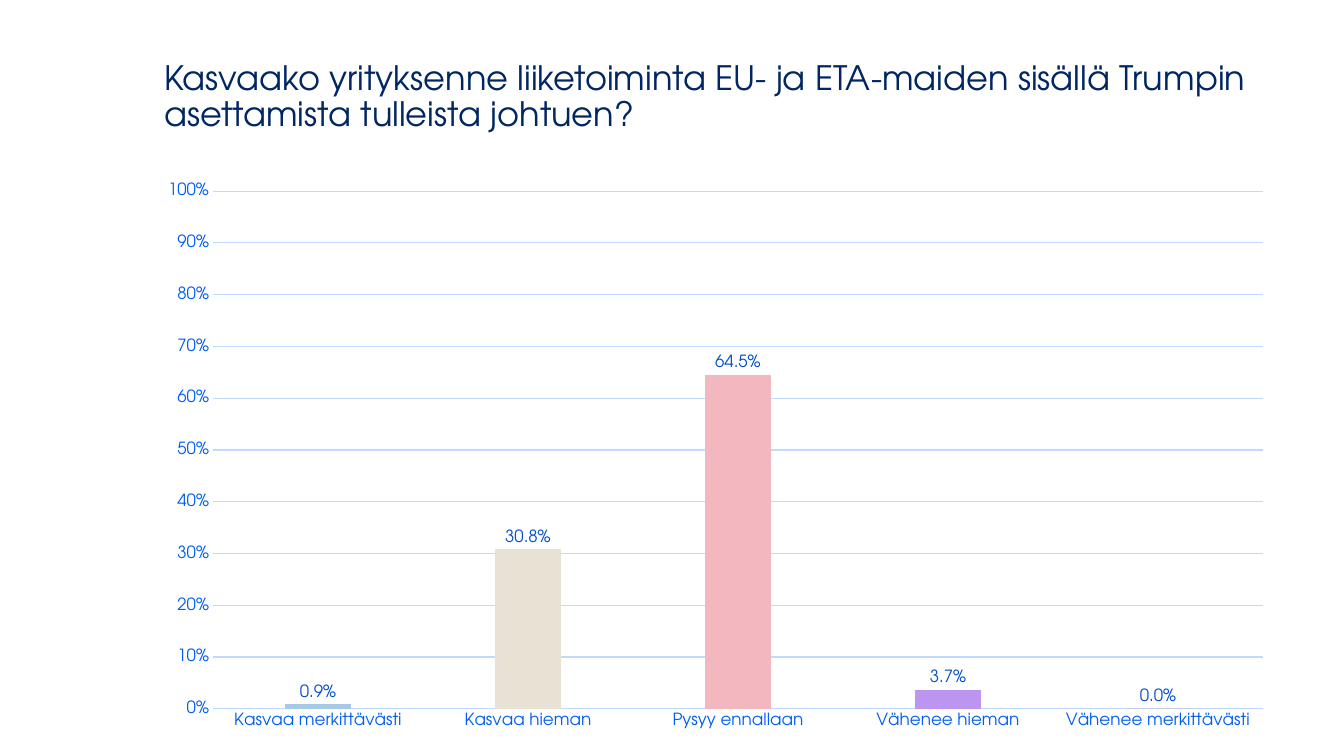
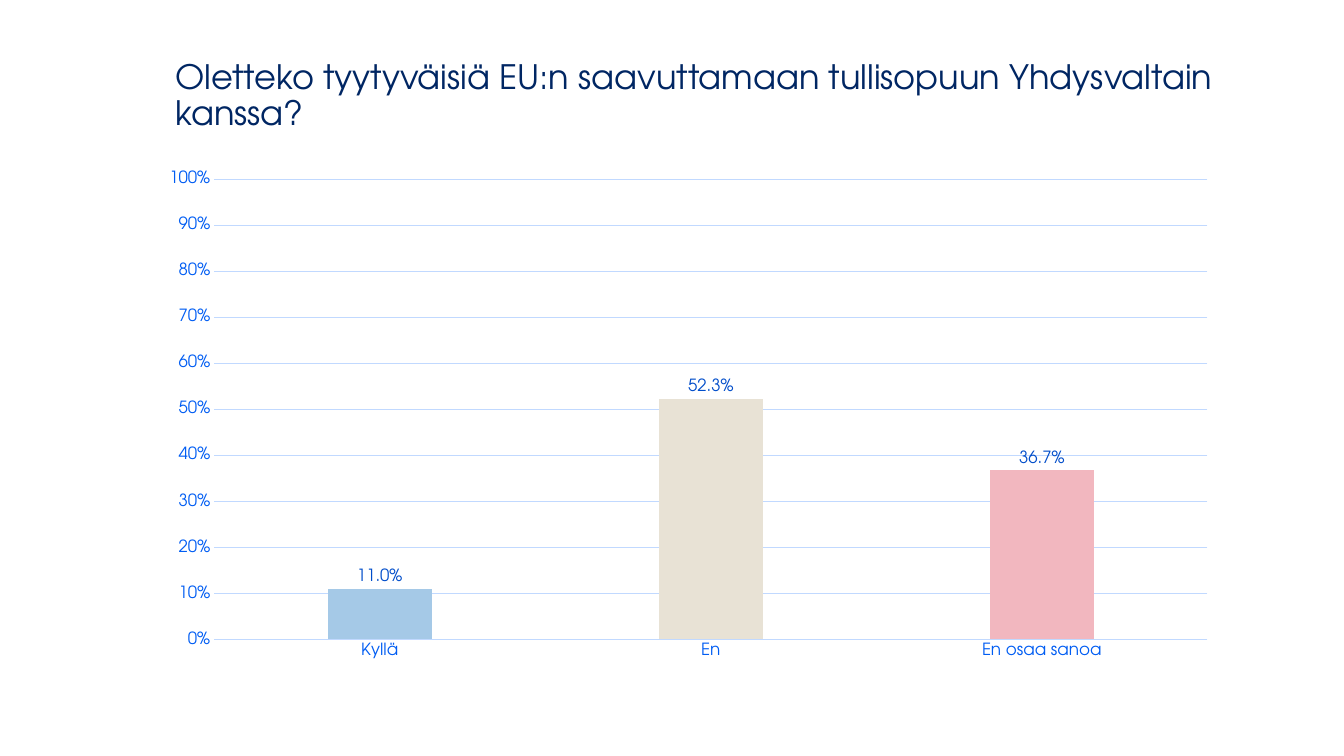
import pptx
import pptx.chart.data
import pptx.dml.color
import pptx.enum.chart
import pptx.enum.text
import pptx.oxml
import pptx.oxml.ns
import pptx.util
from pptx.util import Inches

# Shared style
FONT = "TeX Gyre Adventor"
NAVY, AXIS_BLUE, LABEL_BLUE, GRID = "002663", "005DF3", "004DCA", "C1D9FF"
BAR_COLORS = ["A5C9E7", "E8E2D5", "F2B7BF", "BB95EF", "E66342"]
TITLE_SIZE = (10.94, 1.45)

# Content: boxes are left, top, width, height; plot is in fractions of the chart
SLIDES = [
    {
        "title": "Kasvaako yrityksenne liiketoiminta EU- ja ETA-maiden sisällä "
                 "Trumpin asettamista tulleista johtuen?",
        "title_at": (1.53, 0.24),
        "chart_box": (1.53, 1.8, 11.21, 5.7),
        "plot": (0.052, 0.017, 0.929, 0.901),
        "answers": [
            ("Kasvaa merkittävästi", 0.009),
            ("Kasvaa hieman", 0.308),
            ("Pysyy ennallaan", 0.645),
            ("Vähenee hieman", 0.037),
            ("Vähenee merkittävästi", 0),
        ],
    },
    {
        "title": "Oletteko tyytyväisiä EU:n saavuttamaan tullisopuun "
                 "Yhdysvaltain kanssa?",
        "title_at": (1.64, 0.23),
        "chart_box": (1.55, 1.68, 10.65, 5.13),
        "plot": (0.054, 0.019, 0.925, 0.89),
        "answers": [("Kyllä", 0.11), ("En", 0.523), ("En osaa sanoa", 0.367)],
    },
]


def rgb(value):
    return pptx.dml.color.RGBColor.from_string(value)


def style_font(font, size, color):
    font.name = FONT
    font.size = pptx.util.Pt(size)
    font.bold = False
    font.color.rgb = rgb(color)


def style_line(line):
    line.color.rgb = rgb(GRID)
    line.width = pptx.util.Pt(0.75)


def set_title(s, text, at):
    sp = s.shapes.title
    sp.left, sp.top, sp.width, sp.height = map(Inches, at + TITLE_SIZE)
    tf = sp.text_frame
    tf.word_wrap = True
    tf.auto_size = pptx.enum.text.MSO_AUTO_SIZE.NONE
    tf.vertical_anchor = pptx.enum.text.MSO_ANCHOR.MIDDLE
    p = tf.paragraphs[0]
    p.alignment = pptx.enum.text.PP_ALIGN.LEFT
    p.line_spacing = 0.9
    p.space_before = pptx.util.Pt(0)
    r = p.add_run()
    r.text = text
    style_font(r.font, 24, NAVY)


def set_plot_layout(chart, fractions):
    """Place the inner plot area by hand."""
    area = chart._chartSpace.chart.plotArea
    for old in area.findall(pptx.oxml.ns.qn("c:layout")):
        area.remove(old)
    modes = '<c:xMode val="edge"/><c:yMode val="edge"/>'
    sizes = "".join(f'<c:{k} val="{v}"/>' for k, v in zip("xywh", fractions))
    area.insert(0, pptx.oxml.parse_xml(
        f'<c:layout {pptx.oxml.ns.nsdecls("c")}><c:manualLayout>'
        f'<c:layoutTarget val="inner"/>{modes}{sizes}'
        '</c:manualLayout></c:layout>'))


def add_answer_chart(s, answers, box, plot_layout):
    data = pptx.chart.data.CategoryChartData()
    data.categories = [name for name, _ in answers]
    data.add_series("Series 1", [share for _, share in answers])
    chart = s.shapes.add_chart(
        pptx.enum.chart.XL_CHART_TYPE.COLUMN_CLUSTERED,
        *map(Inches, box), data).chart
    chart.has_title = False
    chart.has_legend = False
    style_font(chart.font, 10, NAVY)
    set_plot_layout(chart, plot_layout)

    # Axes
    for axis in (chart.category_axis, chart.value_axis):
        axis.major_tick_mark = pptx.enum.chart.XL_TICK_MARK.NONE
        axis.minor_tick_mark = pptx.enum.chart.XL_TICK_MARK.NONE
        style_font(axis.tick_labels.font, 12, AXIS_BLUE)
    chart.category_axis.has_major_gridlines = False
    style_line(chart.category_axis.format.line)
    shares = chart.value_axis
    shares.minimum_scale, shares.maximum_scale = 0, 1
    shares.major_unit = 0.1
    shares.tick_labels.number_format = "0%"
    shares.tick_labels.number_format_is_linked = False
    shares.format.line.fill.background()
    shares.has_major_gridlines = True
    style_line(shares.major_gridlines.format.line)

    # Columns and their labels
    plot = chart.plots[0]
    plot.gap_width, plot.overlap = 219, -27
    plot.vary_by_categories = False
    series = plot.series[0]
    series.invert_if_negative = False
    for i in range(len(answers)):
        fill = series.points[i].format.fill
        fill.solid()
        fill.fore_color.rgb = rgb(BAR_COLORS[i])
    labels = series.data_labels
    labels.show_value = True
    labels.number_format = "0.0%"
    labels.number_format_is_linked = False
    labels.position = pptx.enum.chart.XL_LABEL_POSITION.OUTSIDE_END
    style_font(labels.font, 12, LABEL_BLUE)


def main():
    prs = pptx.Presentation()
    prs.slide_width, prs.slide_height = Inches(13.33), Inches(7.5)
    title_only = prs.slide_layouts[5]
    for item in SLIDES:
        s = prs.slides.add_slide(title_only)
        set_title(s, item["title"], item["title_at"])
        add_answer_chart(s, item["answers"], item["chart_box"], item["plot"])
    prs.save("out.pptx")


if __name__ == "__main__":
    main()
